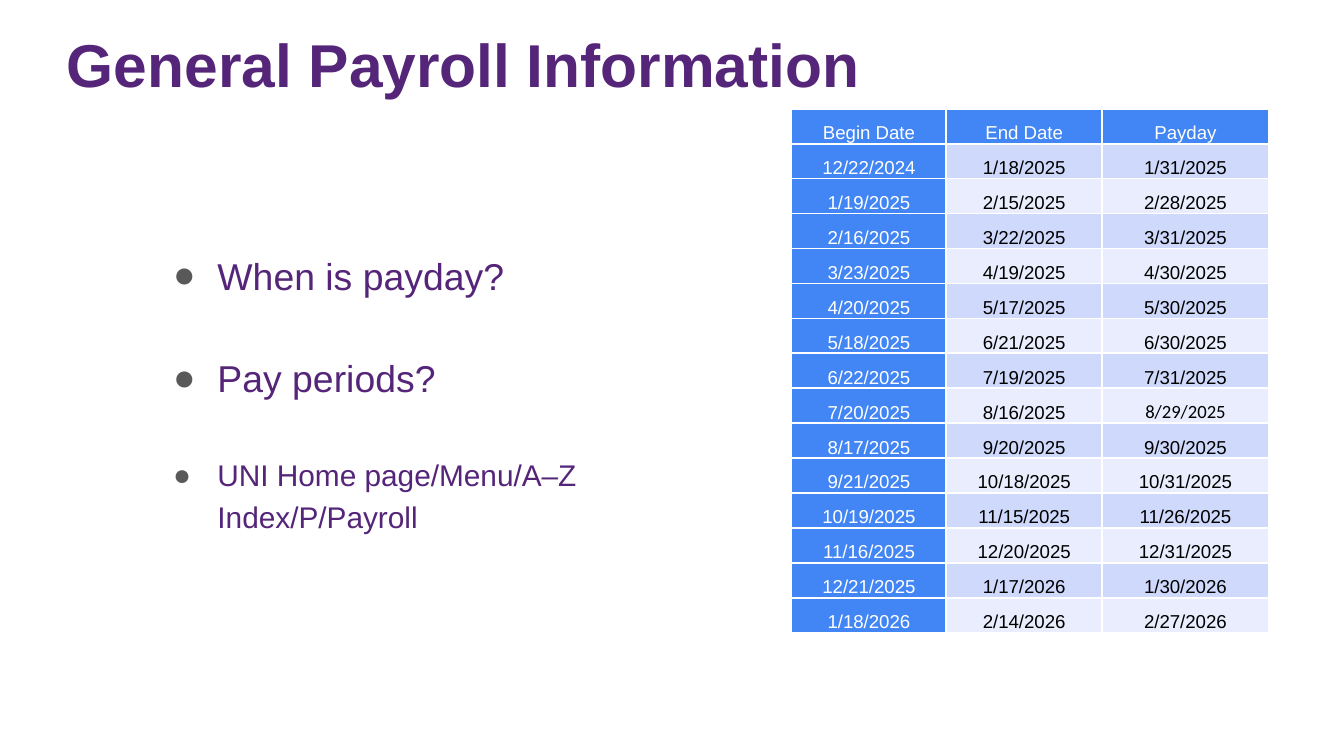
from lxml import etree
from pptx import Presentation
from pptx.dml.color import RGBColor
from pptx.enum.text import MSO_ANCHOR, PP_ALIGN
from pptx.oxml.ns import qn
from pptx.util import Inches, Pt

TOP, BOTTOM = MSO_ANCHOR.TOP, MSO_ANCHOR.BOTTOM
LEFT, CENTER = PP_ALIGN.LEFT, PP_ALIGN.CENTER

PURPLE, GREY, BLUE = "552579", "595959", "4285F4"
WHITE, BLACK = "FFFFFF", "000000"
BANDS = ("E9EDFD", "CFD9FB")

PAY_PERIODS = [
    ("Begin Date", "End Date", "Payday"),
    ("12/22/2024", "1/18/2025", "1/31/2025"),
    ("1/19/2025", "2/15/2025", "2/28/2025"),
    ("2/16/2025", "3/22/2025", "3/31/2025"),
    ("3/23/2025", "4/19/2025", "4/30/2025"),
    ("4/20/2025", "5/17/2025", "5/30/2025"),
    ("5/18/2025", "6/21/2025", "6/30/2025"),
    ("6/22/2025", "7/19/2025", "7/31/2025"),
    ("7/20/2025", "8/16/2025", "8/29/2025"),
    ("8/17/2025", "9/20/2025", "9/30/2025"),
    ("9/21/2025", "10/18/2025", "10/31/2025"),
    ("10/19/2025", "11/15/2025", "11/26/2025"),
    ("11/16/2025", "12/20/2025", "12/31/2025"),
    ("12/21/2025", "1/17/2026", "1/30/2026"),
    ("1/18/2026", "2/14/2026", "2/27/2026"),
]
CALIBRI_DATES = {"8/29/2025"}

QUESTIONS = [
    ("When is payday?", 20),
    ("Pay periods?", 20),
    ("UNI Home page/Menu/A–Z Index/P/Payroll", 16),
]


def color(hex_value):
    return RGBColor.from_string(hex_value)


def add_bullet(paragraph, hex_value):
    props = paragraph._p.get_or_add_pPr()
    props.set("marL", str(Inches(0.5)))
    props.set("indent", str(Inches(-0.33)))
    bullet_color = etree.SubElement(props, qn("a:buClr"))
    etree.SubElement(bullet_color, qn("a:srgbClr"), val=hex_value)
    etree.SubElement(props, qn("a:buFont"), typeface="Arial")
    etree.SubElement(props, qn("a:buChar"), char="●")


def write(paragraph, text, size=10, fill=BLACK, bold=False, font="Arial",
          align=LEFT, bullet=None, line_spacing=None, before=0):
    if bullet:
        add_bullet(paragraph, bullet)
    paragraph.alignment = align
    paragraph.space_before = Pt(before)
    if line_spacing:
        paragraph.line_spacing = line_spacing
    run = paragraph.add_run()
    run.text = text
    run.font.size = Pt(size)
    run.font.name = font
    run.font.bold = bold
    run.font.color.rgb = color(fill)


def add_borders(cell, hex_value, width):
    props = cell._tc.get_or_add_tcPr()
    for index, side in enumerate(("lnL", "lnR", "lnT", "lnB")):
        line = etree.Element(qn(f"a:{side}"), w=str(Pt(width)))
        fill = etree.SubElement(line, qn("a:solidFill"))
        etree.SubElement(fill, qn("a:srgbClr"), val=hex_value)
        props.insert(index, line)


class PayrollSlide:
    def __init__(self, presentation):
        self.slide = presentation.slides.add_slide(presentation.slide_layouts[6])

    def text_frame(self, left, top, width, height, anchor=TOP, top_margin=0.1):
        box = self.slide.shapes.add_textbox(
            Inches(left), Inches(top), Inches(width), Inches(height))
        frame = box.text_frame
        frame.word_wrap = True
        frame.vertical_anchor = anchor
        frame.margin_left = frame.margin_right = frame.margin_bottom = Inches(0.1)
        frame.margin_top = Inches(top_margin)
        return frame

    def title(self, text):
        frame = self.text_frame(0.4, 0.19, 7.72, 0.65, BOTTOM, top_margin=0)
        write(frame.paragraphs[0], text, size=32.4, fill=PURPLE, bold=True)

    def bullets(self, items):
        frame = self.text_frame(1.02, 1.73, 3.74, 3.48)
        for index, (text, size) in enumerate(items):
            paragraph = frame.add_paragraph() if index else frame.paragraphs[0]
            write(paragraph, text, size=size, fill=PURPLE, bullet=GREY,
                  line_spacing=1.15, before=27.5 if index else 0)

    def table(self, rows, left, top, widths, row_height):
        table = self.slide.shapes.add_table(
            len(rows), len(widths), Inches(left), Inches(top),
            Inches(sum(widths)), Inches(row_height * len(rows))).table
        for column, width in zip(table.columns, widths):
            column.width = Inches(width)
        for row_index, dates in enumerate(rows):
            table.rows[row_index].height = Inches(row_height)
            for column_index, date in enumerate(dates):
                is_header = row_index == 0 or column_index == 0
                fill = BLUE if is_header else BANDS[row_index % 2]
                self.cell(table.cell(row_index, column_index), date, fill,
                          WHITE if is_header else BLACK)

    def cell(self, cell, date, fill, text_color):
        cell.fill.solid()
        cell.fill.fore_color.rgb = color(fill)
        cell.vertical_anchor = BOTTOM
        cell.margin_left = cell.margin_right = Inches(0.05)
        cell.margin_top = cell.margin_bottom = 0
        add_borders(cell, WHITE, 1)
        write(cell.text_frame.paragraphs[0], date, fill=text_color, align=CENTER,
              font="Calibri" if date in CALIBRI_DATES else "Arial")


def main():
    # Widescreen page, 16:9
    presentation = Presentation()
    presentation.slide_width = Inches(10)
    presentation.slide_height = Inches(10 * 9 / 16)
    payroll = PayrollSlide(presentation)

    # Heading and questions
    payroll.title("General Payroll Information")
    payroll.bullets(QUESTIONS)

    # Pay period calendar
    payroll.table(PAY_PERIODS, 5.89, 0.81, (1.15, 1.16, 1.24), 0.26)

    presentation.save("out.pptx")


if __name__ == "__main__":
    main()
